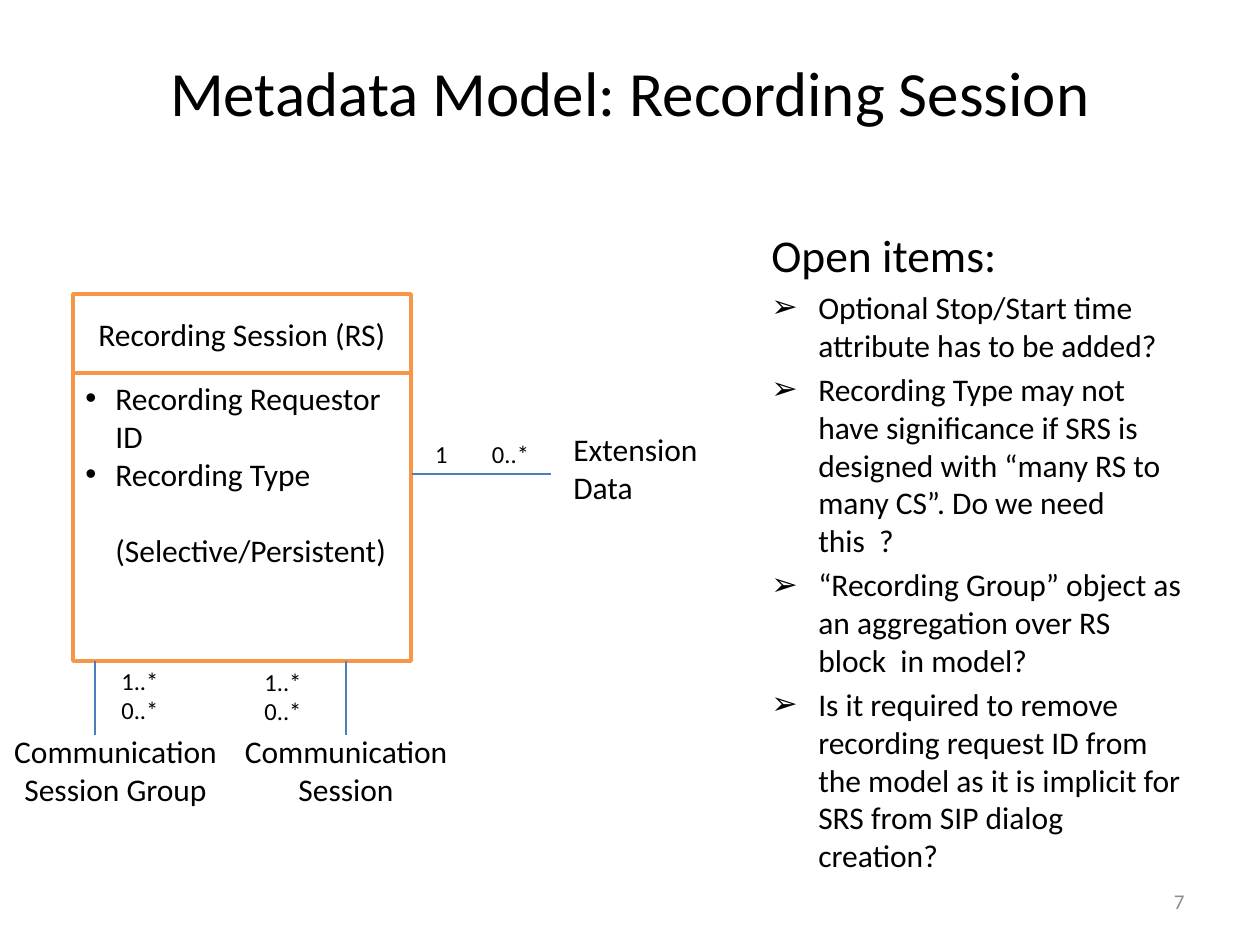
from dataclasses import dataclass

import pptx
import pptx.dml.color
import pptx.enum.shapes
import pptx.enum.text
import pptx.oxml.ns
import pptx.util
from lxml import etree

PX_PER_INCH = 126
FONT = "Calibri"
COLORS = {
    "text": "000000",
    "number": "8C8C8C",
    "paper": "FFFFFF",
    "frame": "F79646",
    "link": "4B7EBC",
}
PRESET = pptx.enum.shapes.MSO_SHAPE
ALIGN = pptx.enum.text.PP_ALIGN
ANCHOR = pptx.enum.text.MSO_ANCHOR


@dataclass(frozen=True)
class Line:
    """One paragraph; indent is the hanging indent in px."""
    text: str
    size: int = 18
    align: ALIGN = ALIGN.LEFT
    color: str = "text"
    bullet: str = ""
    indent: int = 0
    hanging: bool = True
    before: float = 0


@dataclass(frozen=True)
class Box:
    left: int
    top: int
    width: int
    height: int
    lines: tuple[Line, ...]
    preset: PRESET | None = PRESET.FLOWCHART_PROCESS
    fill: str = ""
    frame: str = ""
    anchor: ANCHOR = ANCHOR.MIDDLE


@dataclass(frozen=True)
class Link:
    x1: int
    y1: int
    x2: int
    y2: int


def px(length: int) -> int:
    return round(length * pptx.util.Inches(1) / PX_PER_INCH)


def rgb(name: str) -> pptx.dml.color.RGBColor:
    return pptx.dml.color.RGBColor.from_string(COLORS[name])


def write_line(para, line: Line) -> None:
    para.alignment = line.align
    para.space_before = pptx.util.Pt(line.before)
    properties = para._p.get_or_add_pPr()
    if line.indent:
        properties.set("marL", str(px(line.indent)))
        properties.set("indent", str(-px(line.indent) if line.hanging else 0))
    if line.bullet:
        font = etree.SubElement(properties, pptx.oxml.ns.qn("a:buFont"))
        font.set("typeface", "Arial")
        mark = etree.SubElement(properties, pptx.oxml.ns.qn("a:buChar"))
        mark.set("char", line.bullet)
    span = para.add_run()
    span.text = line.text
    span.font.name = FONT
    span.font.size = pptx.util.Pt(line.size)
    span.font.color.rgb = rgb(line.color)


def draw_box(page, box: Box):
    place = [px(n) for n in (box.left, box.top, box.width, box.height)]
    if box.preset is None:
        shape = page.shapes.add_textbox(*place)
    else:
        shape = page.shapes.add_shape(box.preset, *place)
        shape.shadow.inherit = False
        if box.fill:
            shape.fill.solid()
            shape.fill.fore_color.rgb = rgb(box.fill)
        else:
            shape.fill.background()
        if box.frame:
            shape.line.color.rgb = rgb(box.frame)
            shape.line.width = pptx.util.Pt(2)
        else:
            shape.line.fill.background()
    frame = shape.text_frame
    frame.word_wrap = True
    frame.vertical_anchor = box.anchor
    for index, line in enumerate(box.lines):
        para = frame.add_paragraph() if index else frame.paragraphs[0]
        write_line(para, line)
    return shape


def draw_link(page, link: Link):
    ends = [px(n) for n in (link.x1, link.y1, link.x2, link.y2)]
    connector = page.shapes.add_connector(
        pptx.enum.shapes.MSO_CONNECTOR.STRAIGHT, *ends)
    connector.line.color.rgb = rgb("link")
    connector.line.width = pptx.util.Pt(0.75)
    etree.SubElement(connector._element.spPr, pptx.oxml.ns.qn("a:effectLst"))
    return connector


def count_box(left: int, top: int, width: int, height: int, *counts: str) -> Box:
    """Multiplicity label: a single count is centred, a stack is left-aligned."""
    align = ALIGN.CENTER if len(counts) == 1 else ALIGN.LEFT
    lines = tuple(Line(count, 14, align) for count in counts)
    return Box(left, top, width, height, lines, PRESET.RECTANGLE, "paper")


def open_item(text: str) -> Line:
    return Line(text, bullet="➢", indent=47, before=3.6)


TITLE = Box(63, 38, 1134, 107,
            (Line("Metadata Model: Recording Session", 36, ALIGN.CENTER),), None)
PAGE_NUMBER = Box(903, 876, 294, 50, (Line("7", 12, ALIGN.RIGHT, "number"),), None)
OPEN_ITEMS = Box(759, 221, 438, 624, (
    Line("Open items:", 26, indent=47),
    open_item("Optional Stop/Start time attribute has to be added?"),
    open_item("Recording Type may not have significance if SRS is designed with "
              "“many RS to many CS”. Do we need this  ?"),
    open_item("“Recording Group” object as an aggregation over RS  block  in model?"),
    open_item("Is it required to remove recording request ID from the model as it is "
              "implicit for SRS from SIP dialog creation?"),
), None, anchor=ANCHOR.TOP)

SESSION_NAME = Box(73, 294, 338, 79,
                   (Line("Recording Session (RS)", align=ALIGN.CENTER),),
                   fill="paper", frame="frame")
SESSION_ATTRIBUTES = Box(73, 373, 338, 288, (
    Line("Recording Requestor ID", bullet="•", indent=30),
    Line("Recording Type", bullet="•", indent=30),
    Line("(Selective/Persistent)", indent=30, hanging=False, before=22),
), fill="paper", frame="frame", anchor=ANCHOR.TOP)
EXTENSION = Box(561, 433, 179, 69, (Line("Extension Data"),))
GROUP = Box(0, 735, 231, 69,
            (Line("Communication Session Group", align=ALIGN.CENTER),))
COMMUNICATION = Box(231, 735, 230, 69,
                    (Line("Communication Session", align=ALIGN.CENTER),))

EXTENSION_LINK = Link(412, 474, 551, 474)
GROUP_LINK = Link(95, 661, 95, 735)
COMMUNICATION_LINK = Link(346, 735, 346, 661)
COUNTS = (
    count_box(417, 434, 49, 39, "1"),
    count_box(476, 434, 69, 39, "0..*"),
    count_box(252, 672, 69, 49, "1..*", "0..*"),
    count_box(109, 671, 69, 49, "1..*", "0..*"),
)


def main() -> None:
    deck = pptx.Presentation()
    deck.slide_width, deck.slide_height = px(1260), px(945)
    page = deck.slides.add_slide(deck.slide_layouts[6])
    for box in (TITLE, PAGE_NUMBER, SESSION_NAME, SESSION_ATTRIBUTES,
                EXTENSION, GROUP, *COUNTS, OPEN_ITEMS):
        draw_box(page, box)
    communication = draw_box(page, COMMUNICATION)
    draw_link(page, EXTENSION_LINK)
    draw_link(page, GROUP_LINK)
    draw_link(page, COMMUNICATION_LINK).begin_connect(communication, 0)
    deck.save("out.pptx")


if __name__ == "__main__":
    main()
